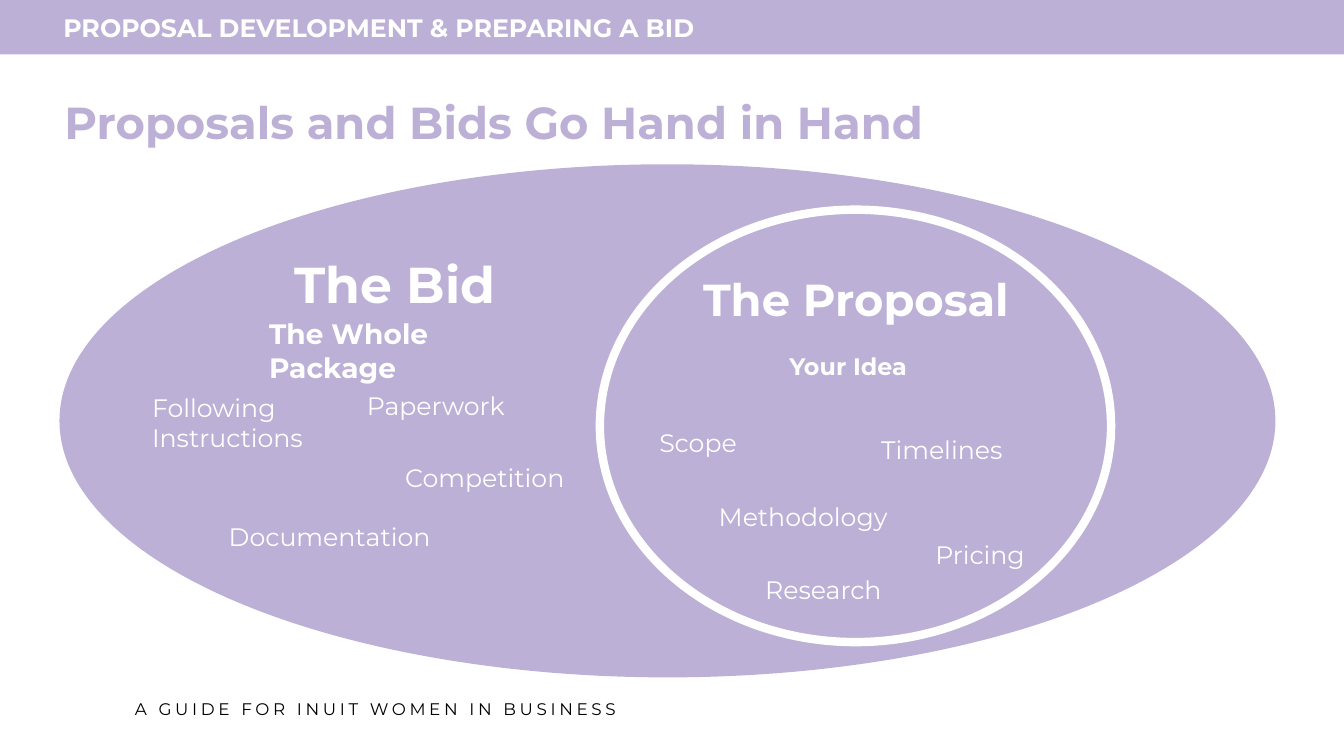
from dataclasses import dataclass

from pptx import Presentation
from pptx.dml.color import RGBColor
from pptx.enum.shapes import MSO_SHAPE
from pptx.enum.text import MSO_ANCHOR, PP_ALIGN
from pptx.shapes.autoshape import Shape
from pptx.slide import Slide
from pptx.util import Emu, Pt

EMU_PER_PX = 9144  # 100 px to the inch
SLIDE_WIDTH, SLIDE_HEIGHT = 1333, 750
FONT = "Montserrat"
LILAC, WHITE, BLACK = "BDB0D6", "FFFFFF", "000000"


@dataclass(frozen=True)
class Area:
    kind: MSO_SHAPE
    left: int
    top: int
    width: int
    height: int
    outline: int = 0  # points


@dataclass(frozen=True)
class Label:
    text: str
    left: int
    top: int
    width: int
    height: int
    size: int = 18
    bold: bool = False
    color: str = WHITE
    align: PP_ALIGN = PP_ALIGN.LEFT
    anchor: MSO_ANCHOR = MSO_ANCHOR.TOP
    line_spacing: float = 1.0
    tracking: int = 0  # hundredths of a point


BANNER = Area(MSO_SHAPE.RECTANGLE, 0, 0, SLIDE_WIDTH, 54)
BID = Area(MSO_SHAPE.OVAL, 59, 163, 1206, 509)
PROPOSAL = Area(MSO_SHAPE.OVAL, 595, 208, 507, 429, outline=6)

FRAME_LABELS = [
    Label("PROPOSAL DEVELOPMENT & PREPARING A BID", 53, 13, 1280, 35,
          bold=True, line_spacing=0.8),
    Label("A GUIDE FOR INUIT WOMEN IN BUSINESS", 124, 688, 817, 30,
          size=12, color=BLACK, tracking=260),
    Label("Proposals and Bids Go Hand in Hand", 54, 88, 1206, 72, size=32,
          bold=True, color=LILAC, anchor=MSO_ANCHOR.MIDDLE, line_spacing=0.9),
]

BID_LABELS = [
    Label("The Bid", 242, 246, 299, 71, size=36, bold=True,
          align=PP_ALIGN.CENTER),
    Label("The Whole Package", 257, 309, 285, 77, size=20, bold=True),
    Label("Following Instructions", 141, 384, 205, 101),
    Label("Paperwork", 354, 382, 202, 71),
    Label("Competition", 392, 454, 203, 71),
    Label("Documentation", 217, 512, 241, 71),
]

PROPOSAL_LABELS = [
    Label("The Proposal", 673, 265, 352, 64, size=32, bold=True,
          align=PP_ALIGN.CENTER),
    Label("Your Idea", 773, 344, 152, 44, size=17, bold=True),
    Label("Scope", 644, 419, 152, 40),
    Label("Timelines", 864, 426, 152, 40),
    Label("Methodology", 703, 492, 221, 71),
    Label("Pricing", 918, 530, 152, 40),
    Label("Research", 749, 565, 152, 40),
]


def px(length: int) -> Emu:
    return Emu(length * EMU_PER_PX)


def rgb(color: str) -> RGBColor:
    return RGBColor.from_string(color)


def draw_area(slide: Slide, area: Area) -> Shape:
    shape = slide.shapes.add_shape(area.kind, px(area.left), px(area.top),
                                   px(area.width), px(area.height))
    shape.shadow.inherit = False
    shape.fill.solid()
    shape.fill.fore_color.rgb = rgb(LILAC)
    if area.outline:
        shape.line.color.rgb = rgb(WHITE)
        shape.line.width = Pt(area.outline)
    else:
        shape.line.fill.background()
    return shape


def draw_label(slide: Slide, label: Label) -> Shape:
    box = slide.shapes.add_textbox(px(label.left), px(label.top),
                                   px(label.width), px(label.height))
    frame = box.text_frame
    frame.word_wrap = True
    frame.vertical_anchor = label.anchor
    paragraph = frame.paragraphs[0]
    paragraph.alignment = label.align
    paragraph.line_spacing = label.line_spacing
    run = paragraph.add_run()
    run.text = label.text
    if label.tracking:
        run._r.get_or_add_rPr().set("spc", str(label.tracking))
    font = paragraph.font
    font.name = FONT
    font.size = Pt(label.size)
    font.bold = label.bold
    font.color.rgb = rgb(label.color)
    return box


def main() -> None:
    deck = Presentation()
    deck.slide_width, deck.slide_height = px(SLIDE_WIDTH), px(SLIDE_HEIGHT)
    slide = deck.slides.add_slide(deck.slide_layouts[6])

    # Areas: the proposal lies inside the bid
    for area in (BANNER, BID, PROPOSAL):
        draw_area(slide, area)

    # Banner, footer and title, then the words in each oval
    for label in FRAME_LABELS + BID_LABELS + PROPOSAL_LABELS:
        draw_label(slide, label)

    deck.save("out.pptx")


if __name__ == "__main__":
    main()
